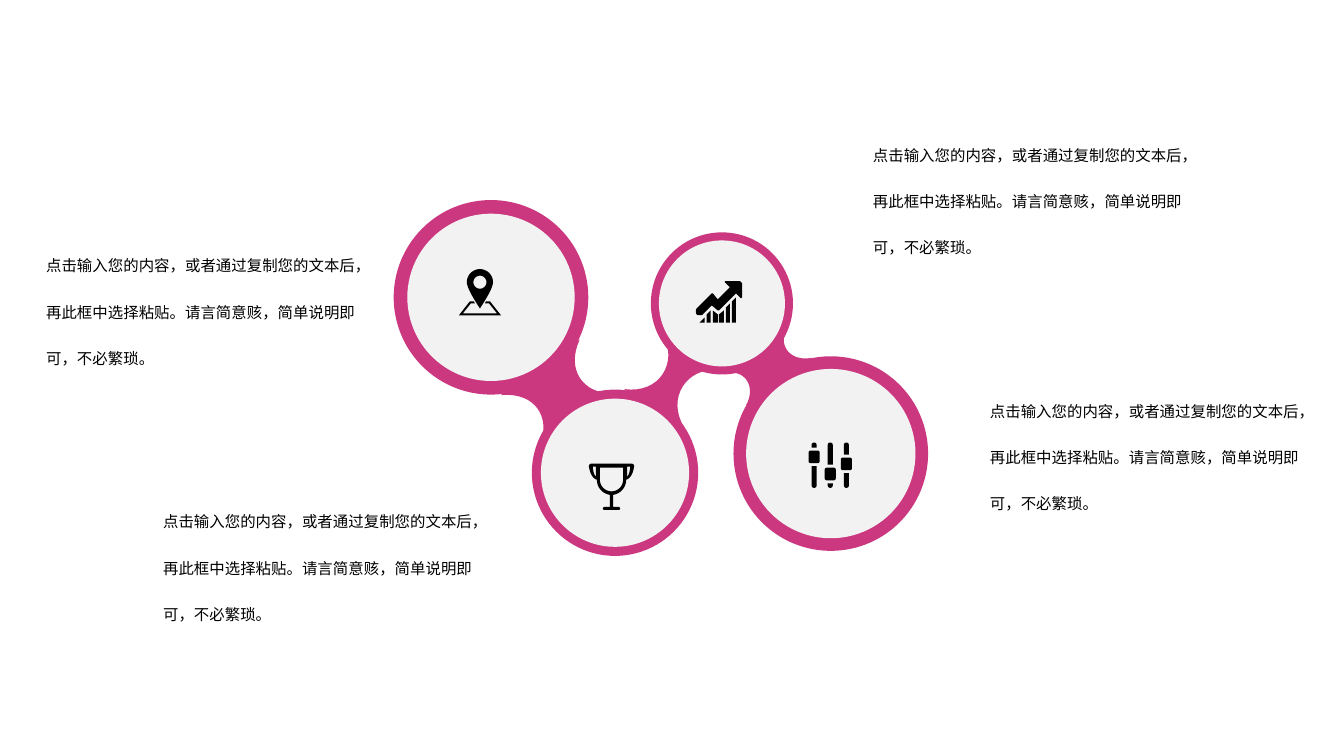
"""Build a slide of four linked circles with icons and captions."""
import math

from lxml import etree
from pptx import Presentation
from pptx.dml.color import RGBColor
from pptx.enum.shapes import MSO_SHAPE
from pptx.enum.text import MSO_AUTO_SIZE
from pptx.oxml.ns import qn
from pptx.util import Inches, Pt

ELLIPSE = MSO_SHAPE.OVAL
GROW = MSO_AUTO_SIZE.SHAPE_TO_FIT_TEXT
FONT = "Noto Sans CJK SC"
MAGENTA, GREY, BLACK = "CC3880", "F2F2F2", "000000"
CAPTION = ("点击输入您的内容，或者通过复制您的文本后，再此框中选择粘贴。"
           "请言简意赅，简单说明即可，不必繁琐。")
CAPTION_STARTS = [(0.36, 2.22), (8.56, 1.12)]
CAPTION_STEP = (1.16, 2.54)

# centre x, centre y, ring diameter, disc diameter
CIRCLES = [(4.87, 2.95, 1.93, 1.66), (6.1, 4.69, 1.65, 1.47),
           (7.16, 3.01, 1.41, 1.25), (8.24, 4.5, 1.93, 1.68)]
# the two curved sides of each neck
NECKS = [
    ([(5.75, 3.37), (5.61, 3.67), (5.79, 3.91), (6.07, 3.9)],
     [(5.36, 4.4), (5.46, 4.14), (5.31, 3.89), (4.97, 3.92)]),
    ([(6.19, 3.86), (6.55, 3.91), (6.72, 3.59), (6.58, 3.33)],
     [(7.11, 3.67), (6.82, 3.65), (6.6, 3.94), (6.79, 4.25)]),
    ([(7.79, 3.3), (7.73, 3.43), (7.84, 3.59), (8.05, 3.55)],
     [(7.4, 4.02), (7.5, 3.84), (7.39, 3.68), (7.24, 3.7)]),
]


def color(hex_code):
    """Return an RGB colour from a hex string."""
    return RGBColor.from_string(hex_code)


def paint(shape, fill):
    """Give a shape a plain fill with no line or shadow."""
    shape.fill.solid()
    shape.fill.fore_color.rgb = color(fill)
    shape.line.fill.background()
    shape.shadow.inherit = False


def bezier(start, control_1, control_2, end, steps=16):
    """Return points along a cubic curve."""
    points = []
    for step in range(steps + 1):
        t = step / steps
        weights = ((1 - t) ** 3, 3 * t * (1 - t) ** 2, 3 * t * t * (1 - t), t ** 3)
        corners = (start, control_1, control_2, end)
        points.append(tuple(sum(w * c[axis] for w, c in zip(weights, corners))
                            for axis in (0, 1)))
    return points


def arc(x, y, radius, first, last, steps=24):
    """Return points along an arc, with clockwise angles in degrees."""
    angles = [math.radians(first + (last - first) * i / steps)
              for i in range(steps + 1)]
    return [(x + radius * math.cos(a), y + radius * math.sin(a)) for a in angles]


def mirror(points, axis):
    """Reflect points across a vertical axis, in reverse order."""
    return [(2 * axis - x, y) for x, y in reversed(points)]


def round_rect(x, y, width, height, radius):
    """Return the outline of a rounded rectangle."""
    left, right = x + radius, x + width - radius
    top, bottom = y + radius, y + height - radius
    corners = [(left, top), (right, top), (right, bottom), (left, bottom)]
    return [point for i, (cx, cy) in enumerate(corners)
            for point in arc(cx, cy, radius, 180 + 90 * i, 270 + 90 * i, 6)]


def add_outline(shapes, contours, fill):
    """Draw closed contours as one filled shape."""
    scaled = [[(Inches(x), Inches(y)) for x, y in contour] for contour in contours]
    builder = shapes.build_freeform(*scaled[0][0])
    for index, contour in enumerate(scaled):
        if index:
            builder.move_to(*contour[0])
        builder.add_line_segments(contour[1:], close=True)
    paint(builder.convert_to_shape(), fill)


def add_circle(shapes, x, y, diameter, fill):
    """Draw a circle around its centre."""
    corner = Inches(x - diameter / 2), Inches(y - diameter / 2)
    paint(shapes.add_shape(ELLIPSE, *corner, Inches(diameter), Inches(diameter)), fill)


def add_text(shapes, text, left, top, width=3.4, height=1.41, size=11,
             ink=BLACK, spacing=2.5):
    """Add a wrapped text box."""
    box = shapes.add_textbox(Inches(left), Inches(top), Inches(width), Inches(height))
    frame = box.text_frame
    frame.word_wrap = True
    frame.auto_size = GROW
    paragraph = frame.paragraphs[0]
    paragraph.line_spacing = spacing
    run = paragraph.add_run()
    run.text = text
    run.font.name = FONT
    run.font.size = Pt(size)
    run.font.color.rgb = color(ink)
    etree.SubElement(run.font._element, qn("a:ea"), typeface=FONT)


def pin_icon():
    """Return a map pin above a folded sheet."""
    x, y = 4.76, 2.8
    sheet = [(x, 3.11), (4.93, 3.11), (4.85, 3.01), (4.81, 3.01),
             (4.82, 2.99), (4.86, 2.99), (4.97, 3.13), (x, 3.13)]
    side = bezier((x + 0.13, y), (x + 0.13, 2.87), (x, 3.06), (x, 3.06))
    pin = arc(x, y, 0.13, 180, 360) + side + mirror(side, x)
    return [sheet + mirror(sheet, x), pin, arc(x, y, 0.065, 0, 360)]


def trophy_icon():
    """Return a cup with two handles and a foot."""
    x = 6.065
    half = [(x, 4.6), (6.27, 4.6), (6.285, 4.61)]
    half += bezier((6.29, 4.62), (6.29, 4.62), (6.28, 4.74), (6.21, 4.76))
    half += bezier((6.21, 4.76), (6.21, 4.84), (6.15, 4.9), (6.08, 4.91))
    half += [(6.08, 5.03), (6.14, 5.03), (6.15, 5.04), (6.15, 5.05), (6.14, 5.06), (x, 5.06)]
    bowl = [(5.95, 4.64), (6.18, 4.64)] + arc(x, 4.76, 0.115, 0, 180)
    handle = [(6.22, 4.73), (6.22, 4.63)]
    handle += bezier((6.25, 4.63), (6.25, 4.66), (6.24, 4.71), (6.22, 4.73))
    return [half + mirror(half, x), bowl, handle, mirror(handle, x)]


def slider_icon():
    """Return three sliders with knobs at different heights."""
    top, bottom, radius, gap = 4.39, 4.84, 0.025, 0.03
    contours = []
    for index, knob in enumerate((4.47, 4.64, 4.54)):
        x = 8.075 + 0.16 * index
        upper, lower = knob - gap, knob + 0.125 + gap
        contours += [
            arc(x, top + radius, radius, 180, 360) + [(x + radius, upper), (x - radius, upper)],
            round_rect(x - 0.055, knob, 0.11, 0.125, 0.02),
            arc(x, bottom - radius, radius, 0, 180) + [(x - radius, lower), (x + radius, lower)],
        ]
    return contours


def growth_icon():
    """Return a rising arrow over slanted bars."""
    bars = [(6.94, 6.99, 3.2, 3.15), (7.01, 7.05, 3.12, 3.08),
            (7.07, 7.12, 3.08, 3.12), (7.13, 7.18, 3.12, 3.08),
            (7.2, 7.24, 3.05, 3.01), (7.26, 7.3, 2.99, 2.95)]
    arrow = [(7.19, 2.79), (7.34, 2.79), (7.36, 2.81), (7.36, 2.95), (7.35, 2.96),
             (7.3, 2.91), (7.13, 3.08), (7.12, 3.08), (7.06, 3.03)]
    arrow += bezier((6.97, 3.12), (6.96, 3.13), (6.93, 3.13), (6.91, 3.12))
    arrow += bezier((6.91, 3.12), (6.9, 3.1), (6.9, 3.07), (6.91, 3.06))
    arrow += [(7.06, 2.91), (7.07, 2.91), (7.12, 2.97), (7.24, 2.85), (7.19, 2.8)]
    return [arrow] + [[(left, 3.2), (left, start), (right, end), (right, 3.2)]
                      for left, right, start, end in bars]


def main():
    """Compose and save the slide."""
    deck = Presentation()
    deck.slide_width, deck.slide_height = Inches(13.33), Inches(7.5)
    shapes = deck.slides.add_slide(deck.slide_layouts[6]).shapes
    chain = shapes.add_group_shape().shapes
    for x, y, ring, _ in CIRCLES:
        add_circle(chain, x, y, ring, MAGENTA)
    for first_side, second_side in NECKS:
        add_outline(chain, [bezier(*first_side) + bezier(*second_side)], MAGENTA)
    for x, y, _, disc in CIRCLES:
        add_circle(chain, x, y, disc, GREY)
    for left, top in CAPTION_STARTS:
        for row in range(2):
            add_text(shapes, CAPTION, left + row * CAPTION_STEP[0],
                     top + row * CAPTION_STEP[1])
    for icon in (pin_icon, trophy_icon, slider_icon, growth_icon):
        add_outline(shapes, icon(), BLACK)
    deck.save("out.pptx")


if __name__ == "__main__":
    main()
